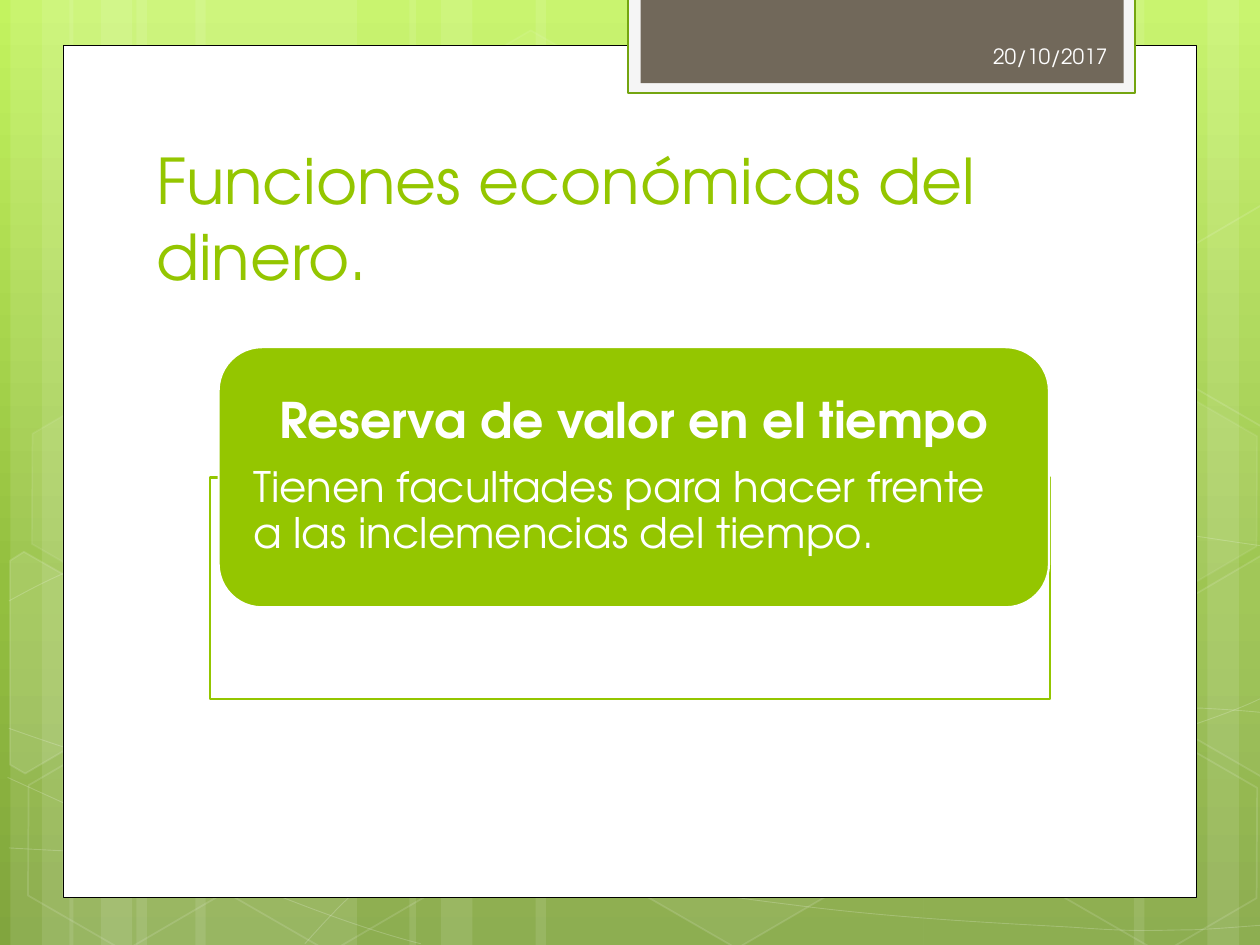
from copy import deepcopy
from dataclasses import dataclass

from pptx import Presentation
from pptx.dml.color import RGBColor
from pptx.enum.shapes import MSO_SHAPE
from pptx.enum.text import MSO_ANCHOR, PP_ALIGN
from pptx.oxml.ns import qn
from pptx.util import Inches, Pt
from lxml.etree import SubElement


@dataclass(frozen=True)
class Theme:
    font: str = "TeX Gyre Adventor"
    white: str = "FFFFFF"
    black: str = "000000"
    green: str = "94C600"
    edge: str = "74A510"
    pale: str = "F5F5F5"
    brown: str = "71685A"
    date: str = "FEFEFE"
    sky: tuple = ((0, "C3F35F"), (62, "93BF3F"), (100, "81A53E"))
    title_size: int = 36
    head_size: int = 28
    body_size: int = 24
    date_size: int = 12


THEME = Theme()
WIDTH, HEIGHT = Inches(10), Inches(7.5)
COLS, ROWS = 100, 75

# Left column and width of each full-height stripe
STRIPES = [
    (10.83, 17.5), (0.83, 5), (3.33, 8.33), (15.5, 17.5), (5.5, 5), (8, 8.33),
    (73.33, 17.5), (95.83, 5), (90, 8.33), (42.5, 30.83), (32.5, 5), (35, 8.33),
]

# Start point, then cubic segments: two handles and an end
WAVES = [
    [(0.7, 67.3), (6.1, 67.6, 11.5, 67.9, 19, 67.8),
     (26.5, 67.7, 35.8, 67.5, 45.8, 66.5), (55.8, 65.5, 70, 63.6, 79.2, 61.7),
     (88.3, 59.8, 97.7, 56.8, 100.7, 55.1)],
    [(0.7, 47.7), (3.6, 46.1, 6.5, 44.6, 12.1, 43.1),
     (17.8, 41.6, 25.9, 39.4, 34.7, 38.7), (43.6, 38, 54.4, 37.9, 65.4, 38.7),
     (76.4, 39.5, 94.7, 42.6, 100.7, 43.4)],
    [(0.6, 61.7), (12.7, 67.2, 24.7, 72.7, 33.4, 74.9)],
    [(0.7, 57.8), (3.8, 58.9, 7, 60, 12.8, 61.6),
     (18.6, 63.1, 27.3, 65.6, 35.7, 67.3), (44, 69, 54.5, 70.8, 62.8, 71.8),
     (71.1, 72.9, 80, 73.3, 85.3, 73.6), (90.5, 74, 91.9, 73.8, 94.5, 73.8),
     (97.1, 73.7, 98.9, 73.5, 100.7, 73.4)],
    [(24.2, 74.9), (26, 72.9, 27.8, 70.9, 30.2, 69.1),
     (32.6, 67.3, 36, 65.3, 38.8, 63.9), (41.6, 62.5, 43.3, 61.9, 47, 60.9),
     (50.6, 59.9, 57.3, 58.5, 60.8, 57.8), (64.4, 57.1, 64.9, 57.1, 68, 56.9),
     (71.1, 56.6, 76, 56.3, 79.4, 56.2), (82.9, 56.1, 88.6, 56.2, 88.6, 56.2),
     (90.8, 56.2, 93.1, 56.2, 95.3, 56.2), (97.1, 56.3, 98.8, 56.4, 100.6, 56.6)],
]

# Left, top, fill opacity (0 for none), line opacity
HEXES = [
    (33.4, 3.6, 4, 8), (49.7, 58.9, 6, 12), (1.1, 59.1, 0, 12),
    (1.4, 31.2, 7, 8), (17.4, 59.2, 0, 12), (75.3, 45.3, 10, 12),
    (83.4, 59.3, 0, 12), (83.4, 31.4, 7, 8),
]

# Hexagons cut by the slide's edge: corners and fill opacity
CUTS = [
    ([(0.8, 44.5), (1.9, 43.8), (9.6, 48.2), (9.5, 57), (2, 61.4), (0.8, 60.7)], 10),
    ([(92.6, 48.5), (100.1, 44.1), (100.9, 44.6), (100.9, 61.3),
      (100.2, 61.7), (92.6, 57.3)], 4),
    ([(92.6, 20.7), (100.1, 16.3), (101, 16.8), (100.9, 33.5),
      (100.2, 33.9), (92.6, 29.5)], 0),
]


def place(col, row):
    return round(col * WIDTH / COLS), round(row * HEIGHT / ROWS)


def frame(col, row, wide, high):
    return *place(col, row), *place(wide, high)


def tint(paint, color, alpha=100):
    """Set a solid colour on a fill, with opacity in percent."""
    paint.solid()
    paint.fore_color.rgb = RGBColor.from_string(color)
    if alpha < 100:
        node = paint._xPr.find(".//" + qn("a:srgbClr"))
        SubElement(node, qn("a:alpha")).set("val", str(alpha * 1000))


def style(shape, fill=None, alpha=100, line=None, width=1, fade=100):
    shape.shadow.inherit = False
    if fill and alpha:
        tint(shape.fill, fill, alpha)
    else:
        shape.fill.background()
    if line:
        shape.line.width = Pt(width)
        tint(shape.line.fill, line, fade)
    else:
        shape.line.fill.background()


def block(slide, kind, box, **look):
    shape = slide.shapes.add_shape(kind, *frame(*box))
    style(shape, **look)
    return shape


def outline(slide, dots, close, **look):
    dots = [place(*dot) for dot in dots]
    pen = slide.shapes.build_freeform(*dots[0])
    pen.add_line_segments(dots[1:], close=close)
    shape = pen.convert_to_shape()
    style(shape, **look)
    return shape


def bend(shape):
    """Make each three straight steps of an open outline one cubic curve."""
    track = shape.element.find(".//" + qn("a:path"))
    lines = track.findall(qn("a:lnTo"))
    for first in range(0, len(lines), 3):
        curve = SubElement(track, qn("a:cubicBezTo"))
        for line in lines[first:first + 3]:
            curve.append(line[0])
            track.remove(line)


def write(para, text, size, color, bold=False, align=PP_ALIGN.LEFT):
    para.alignment = align
    run = para.add_run()
    run.text = text
    run.font.name, run.font.size, run.font.bold = THEME.font, Pt(size), bold
    run.font.color.rgb = RGBColor.from_string(color)


def label(slide, box):
    text = slide.shapes.add_textbox(*frame(*box)).text_frame
    text.word_wrap = True
    text.vertical_anchor = MSO_ANCHOR.MIDDLE
    return text


def paint_sky(slide):
    fill = slide.background.fill
    fill.gradient()
    fill.gradient_angle = 270
    stops = slide.element.find(".//" + qn("a:gsLst"))
    stops.insert(1, deepcopy(stops[0]))
    for stop, (spot, color) in zip(fill.gradient_stops, THEME.sky):
        stop.position = spot / 100
        stop.color.rgb = RGBColor.from_string(color)


def add_decor(slide):
    white = THEME.white
    for left, wide in STRIPES:
        block(slide, MSO_SHAPE.RECTANGLE, (left, 0, wide, ROWS), fill=white, alpha=10)
    for start, *curves in WAVES:
        dots = [start] + [c[i:i + 2] for c in curves for i in (0, 2, 4)]
        bend(outline(slide, dots, False, line=white, width=0.5, fade=20))
    for left, top, alpha, fade in HEXES:
        shape = block(slide, MSO_SHAPE.HEXAGON, (left, top, 17.5, 15.2),
                      fill=white, alpha=alpha, line=white, fade=fade)
        shape.rotation = 30
        shape.adjustments[0] = 0.285
    for dots, alpha in CUTS:
        outline(slide, dots, True, fill=white, alpha=alpha, line=white, fade=12)


def add_panel(slide):
    rect = MSO_SHAPE.RECTANGLE
    block(slide, rect, (5, 3.6, 90, 67.65), fill=THEME.white, line=THEME.black, width=0.5)
    block(slide, rect, (49.85, -0.2, 40.25, 7.6), fill=THEME.pale, line=THEME.edge, width=1.25)
    block(slide, rect, (50.85, -0.2, 38.33, 6.8), fill=THEME.brown)


def move_back(slide):
    """Hand all shapes but the title to the layout, as its backdrop."""
    tree = slide.slide_layout.shapes._spTree
    shapes = [shape for shape in slide.shapes if not shape.is_placeholder]
    for index, shape in enumerate(shapes):
        shape.element.nvSpPr.cNvPr.id = 20 + index
        tree.insert(2 + index, shape.element)


def add_title(slide, words):
    title = slide.shapes.title
    title.left, title.top, title.width, title.height = frame(11.4, 11.25, 76.8, 12.5)
    title.text_frame.word_wrap = True
    title.text_frame.vertical_anchor = MSO_ANCHOR.BOTTOM
    write(title.text_frame.paragraphs[0], words, THEME.title_size, THEME.green)


def add_date(slide, day):
    text = label(slide, (65.6, 2.45, 23.3, 4))
    write(text.paragraphs[0], day, THEME.date_size, THEME.date, align=PP_ALIGN.RIGHT)


def add_card(slide, head, body):
    block(slide, MSO_SHAPE.RECTANGLE, (16.67, 37.9, 66.67, 17.6),
          fill=THEME.white, alpha=90, line=THEME.green, width=1.25)
    block(slide, MSO_SHAPE.ROUNDED_RECTANGLE, (17.35, 27.55, 65.9, 20.65),
          fill=THEME.green, line=THEME.white, width=1.25)
    text = label(slide, (18.3, 28.55, 63.9, 18.6))
    text.margin_left = text.margin_right = Inches(0.18)
    text.margin_top = text.margin_bottom = 0
    write(text.paragraphs[0], head, THEME.head_size, THEME.white, True, PP_ALIGN.CENTER)
    write(text.add_paragraph(), body, THEME.body_size, THEME.white)
    for para in text.paragraphs:
        para.line_spacing = 0.9
        para.space_after = Pt(0.35 * para.runs[0].font.size.pt)


def main():
    deck = Presentation()
    deck.slide_width, deck.slide_height = WIDTH, HEIGHT
    slide = deck.slides.add_slide(deck.slide_layouts[5])
    paint_sky(slide)
    add_decor(slide)
    add_panel(slide)
    move_back(slide)
    add_title(slide, "Funciones económicas del dinero.")
    add_date(slide, "20/10/2017")
    add_card(slide, "Reserva de valor en el tiempo",
             "Tienen facultades para hacer frente a las inclemencias del tiempo.")
    deck.save("out.pptx")


if __name__ == "__main__":
    main()
